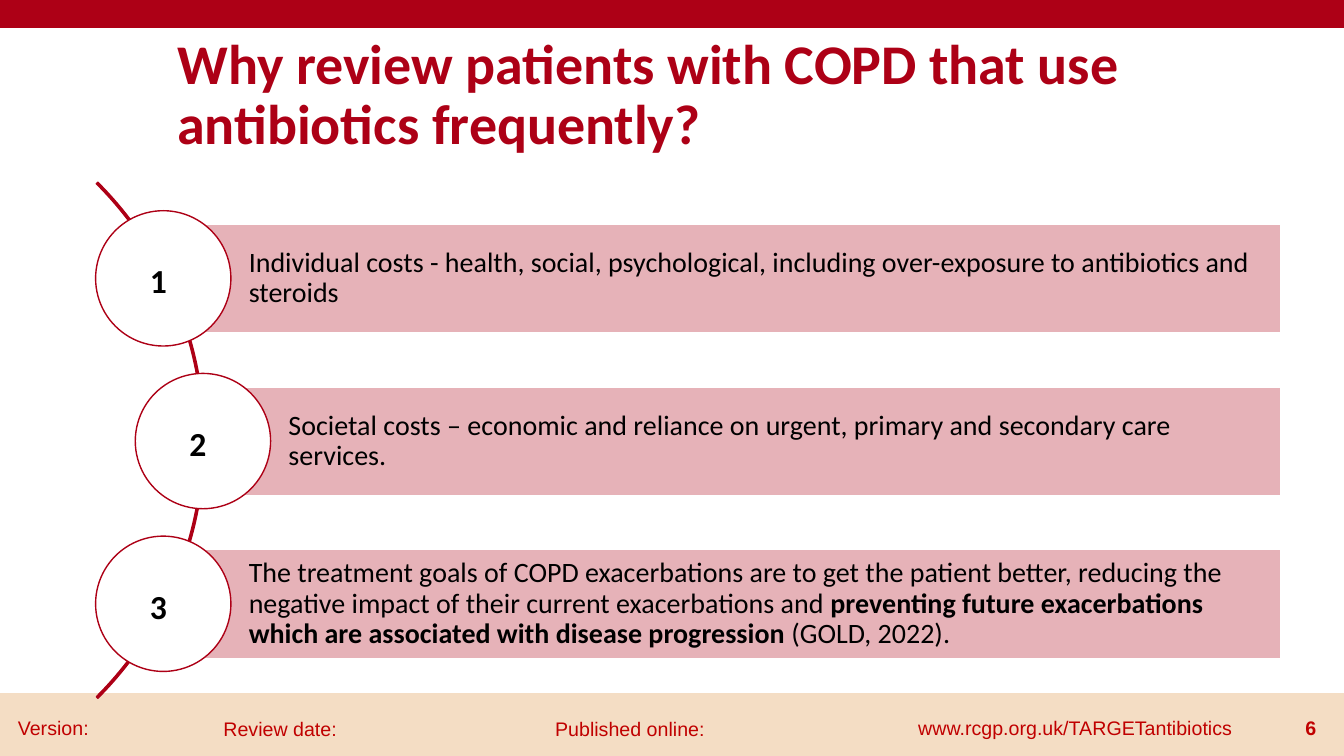
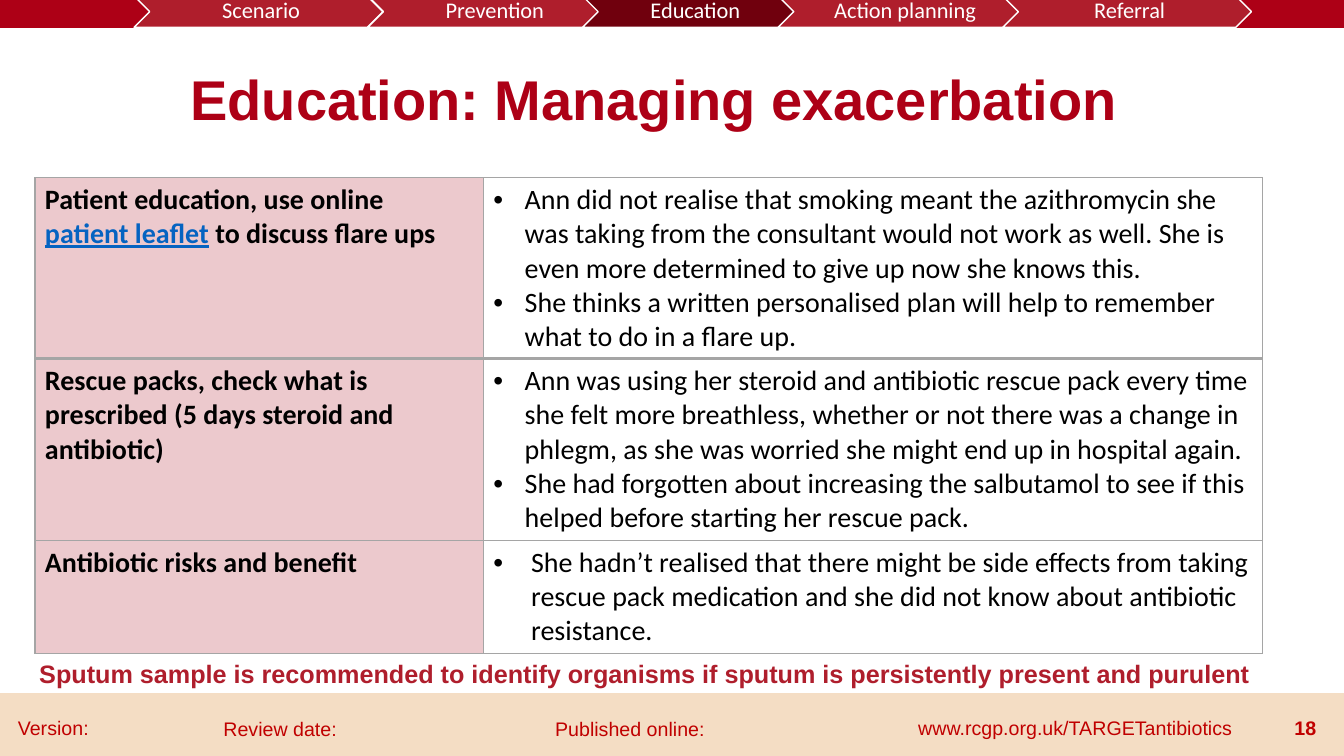
from lxml.etree import SubElement
from pptx import Presentation
from pptx.dml.color import RGBColor
from pptx.enum.shapes import MSO_SHAPE
from pptx.enum.text import MSO_ANCHOR, PP_ALIGN
from pptx.oxml.ns import qn
from pptx.util import Cm, Pt

CRIMSON = "AD0016"
SAND = "F4DDC4"
FOOTER_RED = "C00000"
CHEVRON_RED = "AF1E2C"
WHITE = "FFFFFF"
WIDTH, HEIGHT = 33.87, 19.05
TITLE = {"size": 40, "colour": CRIMSON, "bold": True, "spacing": 0.9, "anchor": MSO_ANCHOR.MIDDLE}


def paint(fill, colour, opacity=100):
    fill.solid()
    fill.fore_color.rgb = RGBColor.from_string(colour)
    if opacity < 100:
        tint = fill.fore_color._xFill.find(qn("a:srgbClr"))
        SubElement(tint, qn("a:alpha"), val=str(opacity * 1000))


def write(frame, *paragraphs, size=20, font="Calibri", colour="000000", bold=False,
          align=PP_ALIGN.LEFT, spacing=1.0, anchor=MSO_ANCHOR.TOP, margins=None, bullet=0):
    frame.word_wrap = True
    frame.vertical_anchor = anchor
    if margins:
        (frame.margin_left, frame.margin_top,
         frame.margin_right, frame.margin_bottom) = map(Cm, margins)
    for index, content in enumerate(paragraphs):
        para = frame.add_paragraph() if index else frame.paragraphs[0]
        para.alignment = align
        para.line_spacing = spacing
        if bullet:
            properties = para._p.get_or_add_pPr()
            properties.set("marL", str(Cm(bullet)))
            properties.set("indent", str(-Cm(bullet)))
            SubElement(properties, qn("a:buFont"), typeface="Arial")
            SubElement(properties, qn("a:buChar"), char="•")
        for text, changes in [(content, {})] if isinstance(content, str) else content:
            span = para.add_run()
            span.text = text
            span.font.name = font
            span.font.size = Pt(size)
            span.font.bold = changes.get("bold", bold)
            span.font.underline = changes.get("underline", False)
            paint(span.font.fill, changes.get("colour", colour))


deck = Presentation()
deck.slide_width, deck.slide_height = Cm(WIDTH), Cm(HEIGHT)

pages = []
for number in ("6", "18"):
    page = deck.slides.add_slide(deck.slide_layouts[6])
    pages.append(page)
    for top, height, colour in ((17.48, 1.57, SAND), (-0.02, 0.71, CRIMSON)):
        band = page.shapes.add_shape(MSO_SHAPE.RECTANGLE, 0, Cm(top), Cm(WIDTH), Cm(height))
        band.shadow.inherit = False
        paint(band.fill, colour)
        paint(band.line.fill, colour)
        band.line.width = Pt(1)
    for left, top, width, text in (
        (22.89, 17.91, 9.27, "www.rcgp.org.uk/TARGETantibiotics"),
        (0.2, 17.91, 2.6, "Version:"),
        (5.38, 17.93, 4.22, "Review date:"),
        (13.74, 17.94, 4.47, "Published online:"),
    ):
        box = page.shapes.add_textbox(Cm(left), Cm(top), Cm(width), Cm(1.02))
        write(box.text_frame, text, size=14, font="Arial", colour=FOOTER_RED)
    box = page.shapes.add_textbox(Cm(31.95), Cm(17.91), Cm(1.47), Cm(1.02))
    write(box.text_frame, number, size=14, font="Arial", colour=FOOTER_RED,
          bold=True, align=PP_ALIGN.RIGHT)

reasons_page, education_page = pages

title = reasons_page.shapes.add_textbox(Cm(4.22), Cm(0.48), Cm(29.64), Cm(3.91))
write(title.text_frame, "Why review patients with COPD that use antibiotics frequently?", **TITLE)

arc = reasons_page.shapes.add_shape(MSO_SHAPE.BLOCK_ARC, Cm(-13.23), Cm(1.9), Cm(18.39), Cm(18.39))
arc.shadow.inherit = False
for index, value in enumerate((189, 27, 0.003)):
    arc.adjustments[index] = value
paint(arc.fill, CRIMSON)
paint(arc.line.fill, CRIMSON)
arc.line.width = Pt(1)

reasons = (
    (4.11, "Individual costs - health, social, psychological, including over-exposure to "
           "antibiotics and steroids"),
    (5.11, "Societal costs – economic and reliance on urgent, primary and secondary care services."),
    (4.11, [
        ("The treatment goals of COPD exacerbations are to get the patient better, reducing the "
         "negative impact of their current exacerbations and ", {}),
        ("preventing future exacerbations which are associated with disease progression",
         {"bold": True}),
        (" (GOLD, 2022).", {}),
    ]),
)
for index, (left, reason) in enumerate(reasons):
    top = 5.65 + index * 4.1
    bar = reasons_page.shapes.add_shape(
        MSO_SHAPE.RECTANGLE, Cm(left), Cm(top), Cm(32.28 - left), Cm(2.74))
    circle = reasons_page.shapes.add_shape(
        MSO_SHAPE.OVAL, Cm(left - 1.7), Cm(top - 0.34), Cm(3.41), Cm(3.41))
    for shape, fill, opacity, line in ((bar, CRIMSON, 30, WHITE), (circle, WHITE, 100, CRIMSON)):
        shape.shadow.inherit = False
        paint(shape.fill, fill, opacity)
        paint(shape.line.fill, line)
        shape.line.width = Pt(1)
    write(bar.text_frame, reason, spacing=0.9, anchor=MSO_ANCHOR.MIDDLE,
          margins=(2.16, 0.15, 0.15, 0.15))
    write(circle.text_frame, str(index + 1), size=24, bold=True, align=PP_ALIGN.CENTER,
          anchor=MSO_ANCHOR.MIDDLE, margins=(0, 0.1, 0.25, 0))

title = education_page.shapes.add_textbox(Cm(4.55), Cm(0.74), Cm(26.97), Cm(3.68))
write(title.text_frame, "Education: Managing exacerbation", font="Arial", **TITLE)

rows = (
    (4.56, [("Patient education, use online ", {}),
            ("patient leaflet", {"colour": "0563C1", "underline": True}),
            (" to discuss flare ups", {})],
     0.79,
     ("Ann did not realise that smoking meant the azithromycin she was taking from the consultant "
      "would not work as well. She is even more determined to give up now she knows this.",
      "She thinks a written personalised plan will help to remember what to do in a flare up.")),
    (4.58, "Rescue packs, check what is prescribed (5 days steroid and antibiotic)",
     0.79,
     ("Ann was using her steroid and antibiotic rescue pack every time she felt more breathless, "
      "whether or not there was a change in phlegm, as she was worried she might end up in "
      "hospital again.",
      "She had forgotten about increasing the salbutamol to see if this helped before starting "
      "her rescue pack.")),
    (2.84, "Antibiotic risks and benefit",
     0.95,
     ("She hadn’t realised that there might be side effects from taking rescue pack medication "
      "and she did not know about antibiotic resistance.",)),
)
table = education_page.shapes.add_table(
    len(rows), 2, Cm(0.88), Cm(4.48), Cm(30.93), Cm(11.98)).table
table.first_row = False
table.horz_banding = False
table.columns[0].width, table.columns[1].width = Cm(11.3), Cm(19.63)
for index, (height, topic, bullet, findings) in enumerate(rows):
    table.rows[index].height = Cm(height)
    topic_cell, findings_cell = table.rows[index].cells
    for cell in (topic_cell, findings_cell):
        for side in ("L", "R", "T", "B"):
            heavy = (index, side) in ((0, "B"), (1, "T"))
            border = SubElement(cell._tc.get_or_add_tcPr(), qn("a:ln" + side),
                                w=str(Pt(2 if heavy else 1)))
            SubElement(SubElement(border, qn("a:solidFill")), qn("a:srgbClr"), val="A5A5A5")
    paint(topic_cell.fill, "ECC9CD")
    findings_cell.fill.background()
    write(topic_cell.text_frame, topic, bold=True)
    write(findings_cell.text_frame, *findings, bullet=bullet)

note = education_page.shapes.add_textbox(Cm(0.74), Cm(16.46), Cm(32.26), Cm(1.02))
write(note.text_frame,
      "Sputum sample is recommended to identify organisms if sputum is persistently present "
      "and purulent", size=18, font="Arial", colour=CHEVRON_RED, bold=True)

for left, width, colour, stage in (
    (3.38, 6.27, CHEVRON_RED, "Scenario"),
    (9.27, 6.27, CHEVRON_RED, "Prevention"),
    (14.68, 5.56, "70000D", "Education"),
    (19.61, 6.27, CHEVRON_RED, "Action planning"),
    (25.27, 6.27, CHEVRON_RED, "Referral"),
):
    chevron = education_page.shapes.add_shape(
        MSO_SHAPE.CHEVRON, Cm(left), Cm(-0.1), Cm(width), Cm(0.79))
    chevron.shadow.inherit = False
    paint(chevron.fill, colour)
    paint(chevron.line.fill, WHITE)
    chevron.line.width = Pt(1)
    write(chevron.text_frame, stage, size=16, colour=WHITE, align=PP_ALIGN.CENTER, spacing=0.9,
          anchor=MSO_ANCHOR.MIDDLE, margins=(0.18, 0.05, 0.05, 0.05))

deck.save("out.pptx")
